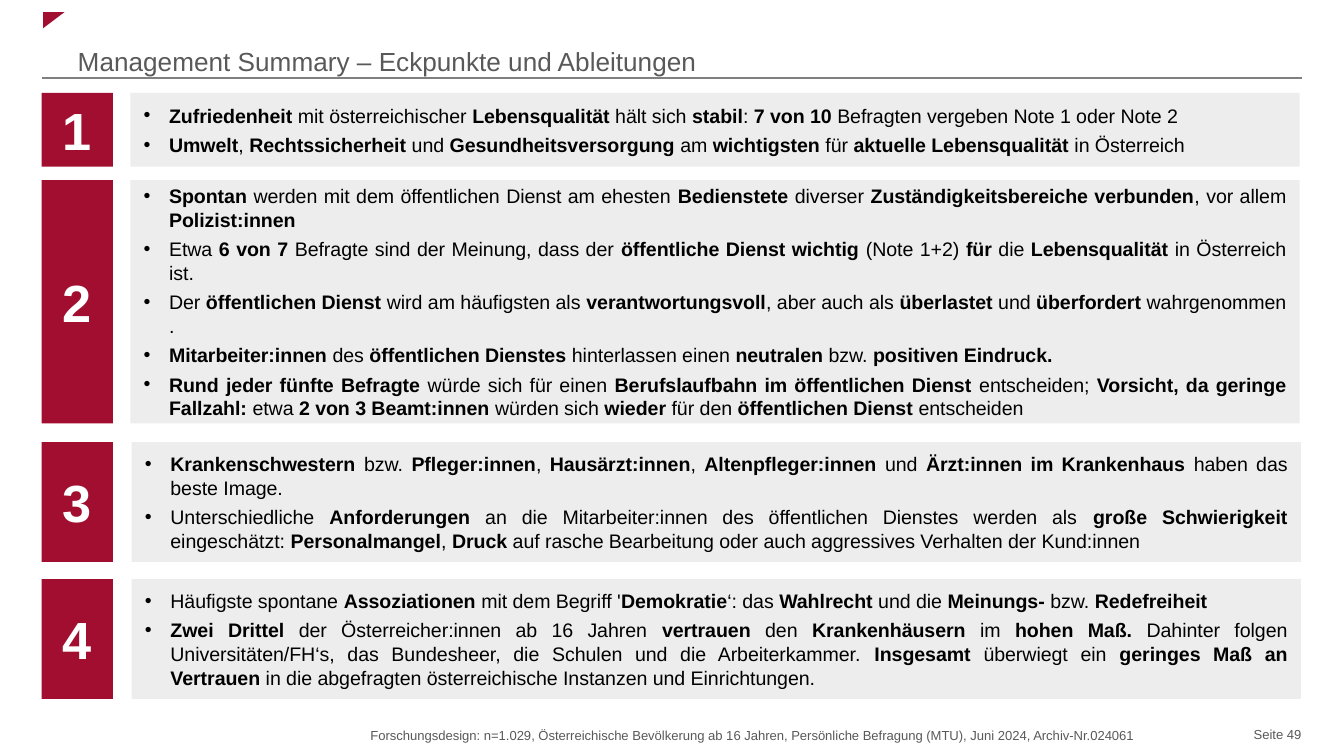
from lxml import etree
from pptx import Presentation
from pptx import util as u
from pptx.dml.color import RGBColor
from pptx.enum import shapes, text
from pptx.oxml.ns import qn

HUES = {"red": "A20E2F", "pale": "EDEDED", "gray": "595959",
        "rule": "808080", "white": "FFFFFF", "black": "000000"}
ALIGN = text.PP_ALIGN
MID, LOW, TOP = (text.MSO_ANCHOR.MIDDLE, text.MSO_ANCHOR.BOTTOM,
                 text.MSO_ANCHOR.TOP)
WIDTH = 10
INDENT = 0.19

# Each block: top, height, left edge of its panel, alignment, points.
# Double asterisks switch bold on and off.
BLOCKS = [
    (0.69, 0.55, 0.97, ALIGN.LEFT, [
        "**Zufriedenheit** mit österreichischer **Lebensqualität** hält sich "
        "**stabil**: **7 von 10 **Befragten vergeben Note 1 oder Note 2",
        "**Umwelt**, **Rechtssicherheit** und **Gesundheitsversorgung** am "
        "**wichtigsten** für **aktuelle Lebensqualität** in Österreich",
    ]),
    (1.34, 1.81, 0.97, ALIGN.JUSTIFY, [
        "**Spontan** werden mit dem öffentlichen Dienst am ehesten "
        "**Bedienstete** diverser **Zuständigkeitsbereiche verbunden**, "
        "vor allem **Polizist:innen**",
        "Etwa **6 von 7 **Befragte sind der Meinung, dass der **öffentliche "
        "Dienst wichtig **(Note 1+2) **für **die** Lebensqualität **in "
        "Österreich ist.",
        "Der **öffentlichen Dienst **wird am häufigsten als "
        "**verantwortungsvoll**, aber auch als **überlastet** und "
        "**überfordert** wahrgenommen .",
        "**Mitarbeiter:innen **des **öffentlichen Dienstes **hinterlassen "
        "einen **neutralen** bzw. **positiven Eindruck.**",
        "**Rund jeder fünfte Befragte **würde sich für einen "
        "**Berufslaufbahn im öffentlichen Dienst **entscheiden; **Vorsicht, "
        "da geringe Fallzahl: **etwa **2 von 3 Beamt:innen** würden sich "
        "**wieder** für den **öffentlichen Dienst** entscheiden",
    ]),
    (3.29, 0.89, 0.98, ALIGN.JUSTIFY, [
        "**Krankenschwestern** bzw. **Pfleger:innen**, **Hausärzt:innen**, "
        "**Altenpfleger:innen **und **Ärzt:innen im Krankenhaus **haben das "
        "beste Image.",
        "Unterschiedliche **Anforderungen** an die Mitarbeiter:innen des "
        "öffentlichen Dienstes werden als **große Schwierigkeit "
        "**eingeschätzt: **Personalmangel**, **Druck** auf rasche "
        "Bearbeitung oder auch aggressives Verhalten der Kund:innen",
    ]),
    (4.31, 0.89, 0.98, ALIGN.JUSTIFY, [
        "Häufigste spontane **Assoziationen** mit dem Begriff "
        "'**Demokratie**‘: das **Wahlrecht** und die **Meinungs-** bzw. "
        "**Redefreiheit**",
        "**Zwei Drittel **der Österreicher:innen ab 16 Jahren **vertrauen** "
        "den **Krankenhäusern** im **hohen Maß.** Dahinter folgen "
        "Universitäten/FH‘s, das Bundesheer, die Schulen und die "
        "Arbeiterkammer. **Insgesamt **überwiegt ein **geringes Maß an "
        "Vertrauen **in die abgefragten österreichische Instanzen und "
        "Einrichtungen.",
    ]),
]


def hue(name):
    return RGBColor.from_string(HUES[name])


def place(box):
    return [u.Inches(n) for n in box]


def shape(slide, box, fill, kind=shapes.MSO_SHAPE.RECTANGLE):
    item = slide.shapes.add_shape(kind, *place(box))
    item.shadow.inherit = False
    item.fill.solid()
    item.fill.fore_color.rgb = hue(fill)
    item.line.fill.background()
    return item


def bullet(para):
    props = para._p.get_or_add_pPr()
    props.set("marL", str(u.Inches(INDENT)))
    props.set("indent", str(-u.Inches(INDENT)))
    etree.SubElement(props, qn("a:buFont"), typeface="Arial")
    etree.SubElement(props, qn("a:buChar"), char="•")


def write(item, lines, size, color, align=ALIGN.LEFT, anchor=MID,
          bold=False, points=False, base=0.05):
    """Fill a shape with paragraphs, reading ** as a bold switch."""
    frame = item.text_frame
    frame.word_wrap = True
    frame.vertical_anchor = anchor
    frame.margin_bottom = u.Inches(base)
    for i, line in enumerate(lines):
        para = frame.add_paragraph() if i else frame.paragraphs[0]
        para.alignment = align
        if points:
            para.line_spacing = 1.01
            para.space_after = u.Pt(3)
            bullet(para)
        for j, part in enumerate(line.split("**")):
            if part:
                run = para.add_run()
                run.text = part
                font = run.font
                font.name, font.size = "Arial", u.Pt(size)
                font.bold = bold or j % 2 == 1
                font.color.rgb = hue(color)


def label(slide, box, line, size, **form):
    item = slide.shapes.add_textbox(*place(box))
    write(item, [line], size, "gray", **form)


def header(slide, left, top, width):
    mark = shape(slide, (left + 0.03, top, 0.12, 0.16), "red",
                 shapes.MSO_SHAPE.RIGHT_TRIANGLE)
    mark.rotation = 90
    label(slide, (left + 0.17, top + 0.03, 8.22, 0.47),
          "Management Summary – Eckpunkte und Ableitungen", 14,
          anchor=LOW, base=0)
    y = top + 0.51
    rule = slide.shapes.add_connector(
        shapes.MSO_CONNECTOR.STRAIGHT, *place((left, y, left + width, y)))
    rule.line.color.rgb = hue("rule")
    rule.line.width = u.Pt(0.75)
    etree.SubElement(rule._element.spPr, qn("a:effectLst"))


def block(slide, number, left, top, height, edge, align, points):
    """Place a numbered tile and its panel of bullet points."""
    tile = shape(slide, (left, top, 0.53, height), "red")
    write(tile, [str(number)], 28, "white", align=ALIGN.CENTER, bold=True)
    panel = shape(slide, (edge, top, 8.7, height), "pale")
    write(panel, points, 10.5, "black", align=align, points=True)


def footer(slide, left, top):
    label(slide, (left, top + 0.2, 7.19, 0.22),
          "Forschungsdesign: n=1.029, Österreichische Bevölkerung ab 16 "
          "Jahren, Persönliche Befragung (MTU), Juni 2024, "
          "Archiv-Nr.024061", 7, align=ALIGN.CENTER, anchor=TOP)
    label(slide, (left + 7.23, top, 0.74, 0.36), "Seite 49", 7,
          anchor=LOW, base=0)


def main():
    deck = Presentation()
    deck.slide_width, deck.slide_height = place((WIDTH, WIDTH * 9 / 16))
    slide = deck.slides.add_slide(deck.slide_layouts[6])
    header(slide, 0.31, 0.07, 9.38)
    for number, parts in enumerate(BLOCKS, 1):
        block(slide, number, 0.31, *parts)
    footer(slide, 2, 5.16)
    deck.save("out.pptx")


if __name__ == "__main__":
    main()
